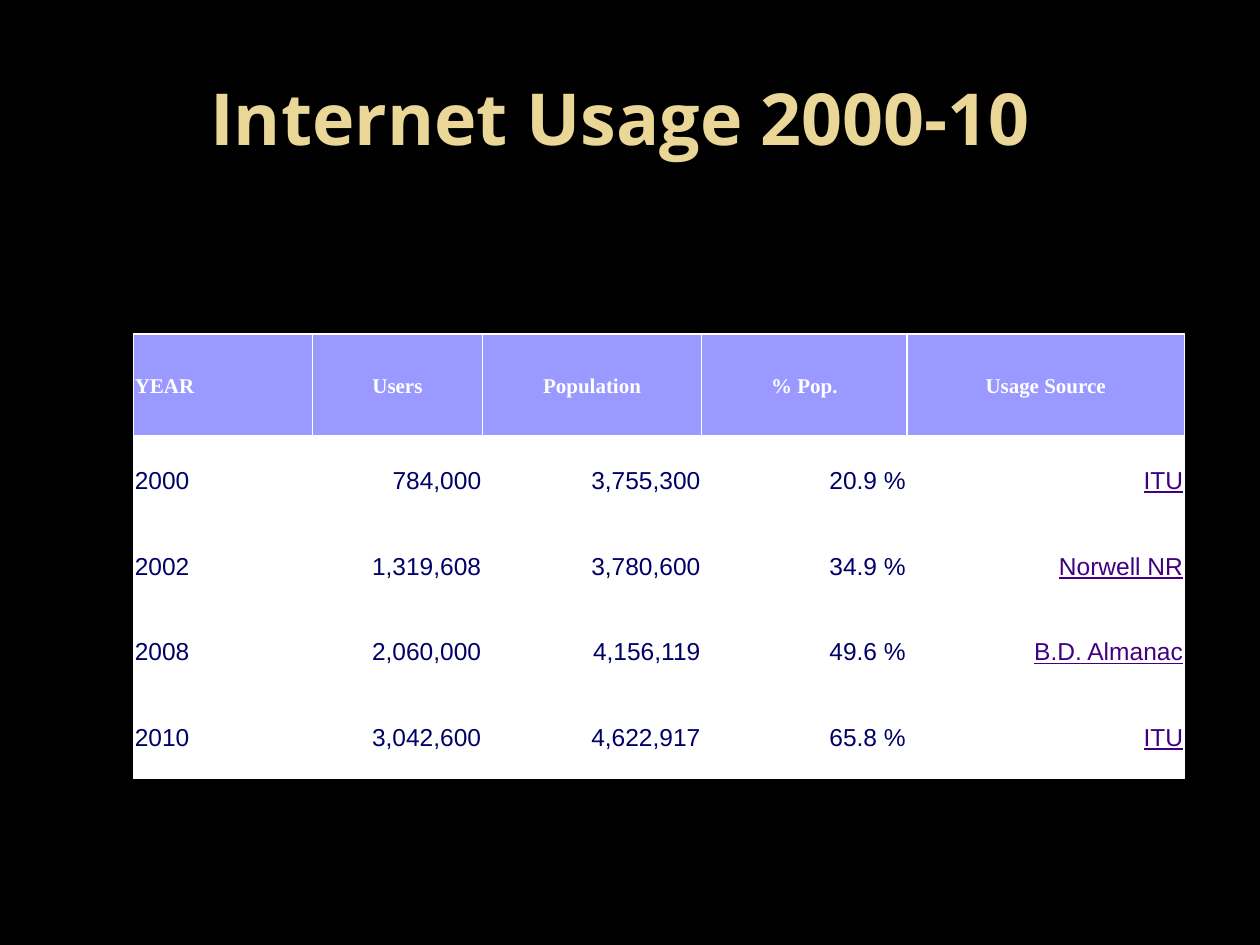
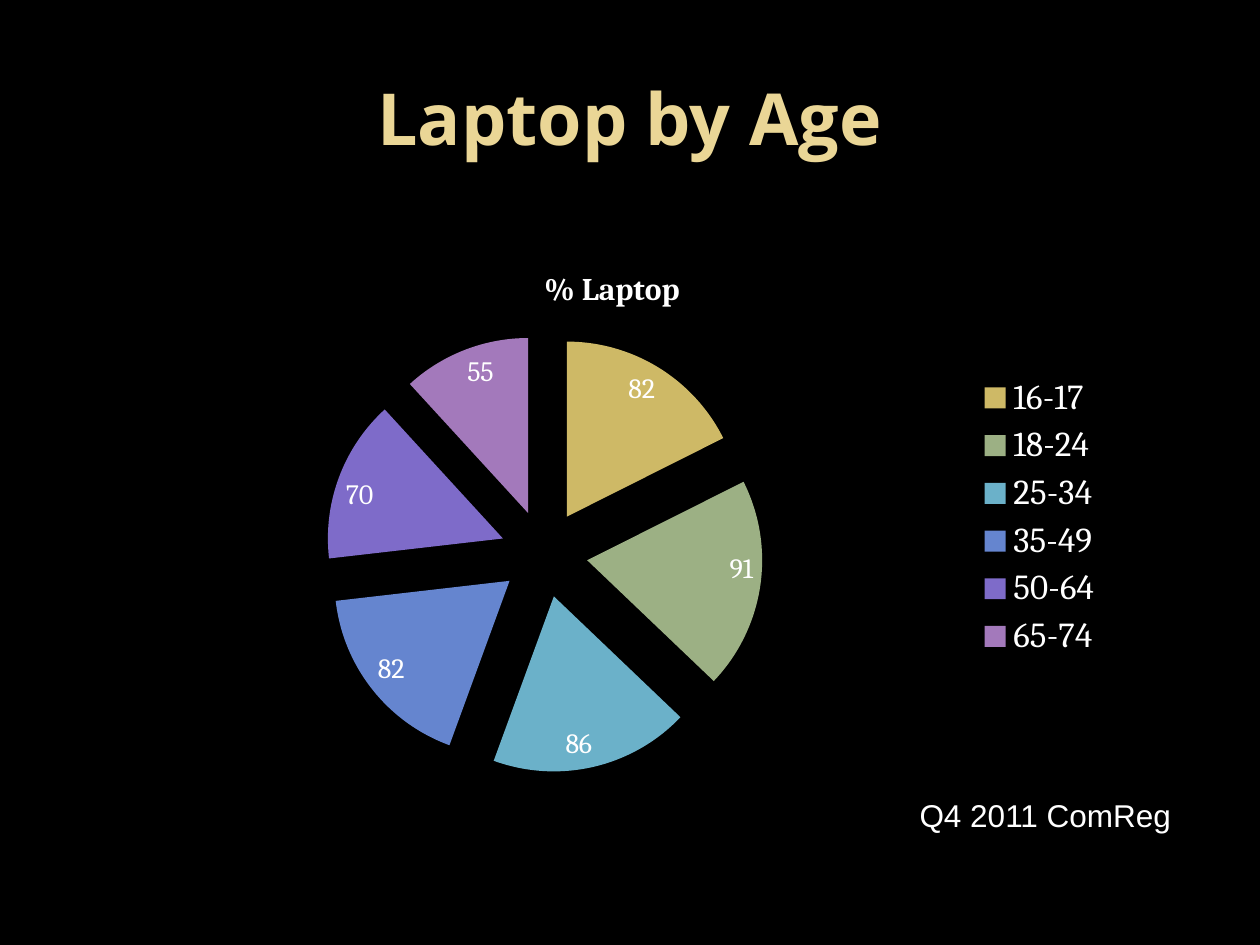
from lxml.etree import SubElement
from pptx import Presentation
from pptx.chart.data import CategoryChartData as ChartData
from pptx.dml.color import RGBColor
from pptx.enum.chart import XL_CHART_TYPE as Kind, XL_LABEL_POSITION as Spot
from pptx.enum.chart import XL_LEGEND_POSITION as Side
from pptx.enum.text import MSO_ANCHOR as Anchor, PP_ALIGN as Align
from pptx.oxml.ns import qn
from pptx.util import Inches, Pt

BLACK, WHITE, GOLD = "000000", "FFFFFF", "EAD696"
LILAC, NAVY, PURPLE = "9999FF", "000066", "410082"

USAGE = [
    ("YEAR", "Users", "Population", "% Pop.", "Usage Source"),
    ("2000", "784,000", "3,755,300", "20.9 %", "ITU"),
    ("2002", "1,319,608", "3,780,600", "34.9 %", "Norwell NR"),
    ("2008", "2,060,000", "4,156,119", "49.6 %", "B.D. Almanac"),
    ("2010", "3,042,600", "4,622,917", "65.8 %", "ITU"),
]
WIDTHS = [1.42, 1.35, 1.74, 1.63, 2.2]
HEIGHTS = [0.81] + [0.68] * 4

LAPTOPS = [  # age group, percent, slice colour
    ("16-17", 82, "CEB966"),
    ("18-24", 91, "9CB084"),
    ("25-34", 86, "6BB1C9"),
    ("35-49", 82, "6585CF"),
    ("50-64", 70, "7E6BC9"),
    ("65-74", 55, "A379BB"),
]


def paint(fill, color):
    fill.solid()
    fill.fore_color.rgb = RGBColor.from_string(color)


def style(font, name, size, color, bold=False):
    font.name, font.size, font.bold = name, Pt(size), bold
    font.color.rgb = RGBColor.from_string(color)


def add_text(slide, text, box, *look, align=Align.LEFT, anchor=Anchor.TOP):
    frame = slide.shapes.add_textbox(*map(Inches, box)).text_frame
    frame.word_wrap = True
    frame.vertical_anchor = anchor
    para = frame.paragraphs[0]
    para.text, para.alignment = text, align
    style(para.font, *look)


def add_slide(deck, title):
    """Add a black slide with the shared gold title."""
    slide = deck.slides.add_slide(deck.slide_layouts[6])
    paint(slide.background.fill, BLACK)
    add_text(slide, title, (0.5, 0.3, 9, 1.25), "Open Sans", 41, GOLD, True,
             align=Align.CENTER, anchor=Anchor.MIDDLE)
    return slide


def fill_cell(cell, text, row, col):
    head, source = row == 0, col == len(WIDTHS) - 1
    paint(cell.fill, LILAC if head else WHITE)
    cell.vertical_anchor = Anchor.MIDDLE
    cell.margin_left = cell.margin_right = Inches(0.01)
    cell.margin_top = cell.margin_bottom = Inches(0.01)
    para = cell.text_frame.paragraphs[0]
    para.text, para.line_spacing, para.space_after = text, 1.15, Pt(10)
    if col:
        para.alignment = Align.CENTER if head else Align.RIGHT
    if head:
        style(para.font, "Times New Roman", 12, WHITE, True)
    else:
        style(para.font, "Arial", 14, PURPLE if source else NAVY)
        para.font.underline = source


def add_usage(slide):
    size = sum(WIDTHS), sum(HEIGHTS)
    table = slide.shapes.add_table(len(HEIGHTS), len(WIDTHS),
                                   *map(Inches, (1.06, 2.65, *size))).table
    for col, width in zip(table.columns, WIDTHS):
        col.width = Inches(width)
    for row, height in zip(table.rows, HEIGHTS):
        row.height = Inches(height)
    for r, line in enumerate(USAGE):
        for c, text in enumerate(line):
            fill_cell(table.cell(r, c), text, r, c)


def add_pie(slide):
    ages, shares, colors = zip(*LAPTOPS)
    data = ChartData()
    data.categories = ages
    data.add_series("% Laptop", shares)
    box = map(Inches, (0.91, 1.94, 7.95, 4.33))
    chart = slide.shapes.add_chart(Kind.PIE, *box, data).chart
    style(chart.font, "Cambria", 10, WHITE)

    chart.has_title = True
    para = chart.chart_title.text_frame.paragraphs[0]
    para.text = "% Laptop "
    style(para.font, "Cambria", 18, WHITE, True)

    chart.has_legend = True
    chart.legend.position = Side.RIGHT
    chart.legend.include_in_layout = False
    style(chart.legend.font, "Cambria", 20, WHITE)

    plot = chart.plots[0]
    plot.vary_by_categories = True
    plot.has_data_labels = True
    labels = plot.data_labels
    labels.show_value, labels.show_percentage = True, False
    labels.position = Spot.INSIDE_END
    style(labels.font, "Cambria", 16, WHITE)

    series = plot.series[0]
    for i, color in enumerate(colors):
        paint(series.points[i].format.fill, color)
    node = series._element
    gap = SubElement(node, qn("c:explosion"), val="25")
    node.find(qn("c:dPt")).addprevious(gap)


def main():
    deck = Presentation()
    deck.slide_width, deck.slide_height = Inches(10), Inches(7.5)
    add_usage(add_slide(deck, "Internet Usage 2000-10 "))
    ages = add_slide(deck, "Laptop by Age")
    add_pie(ages)
    add_text(ages, "Q4 2011 ComReg", (7.2, 6.27, 2.36, 0.4),
             "Arial", 18, WHITE)
    deck.save("out.pptx")


if __name__ == "__main__":
    main()
